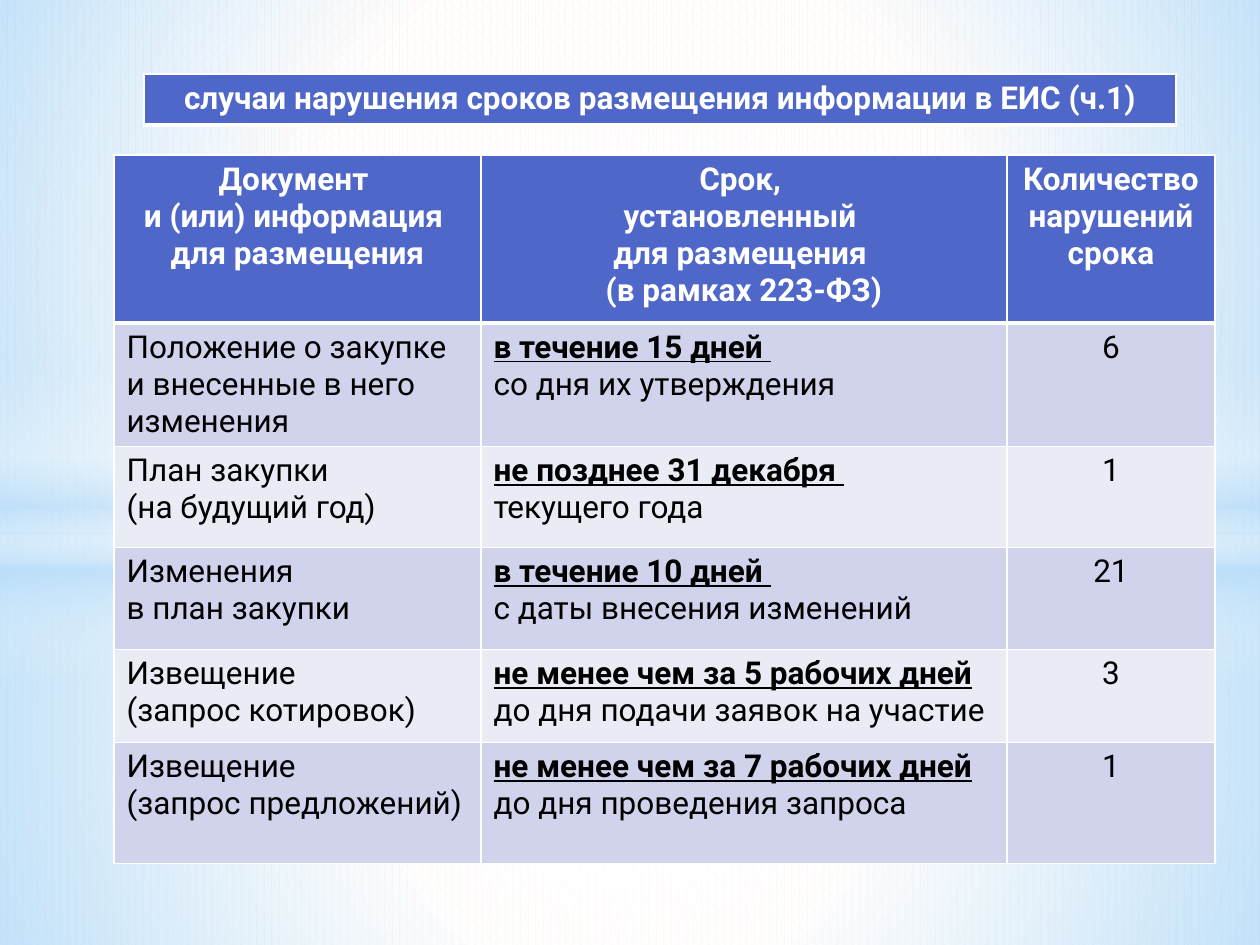
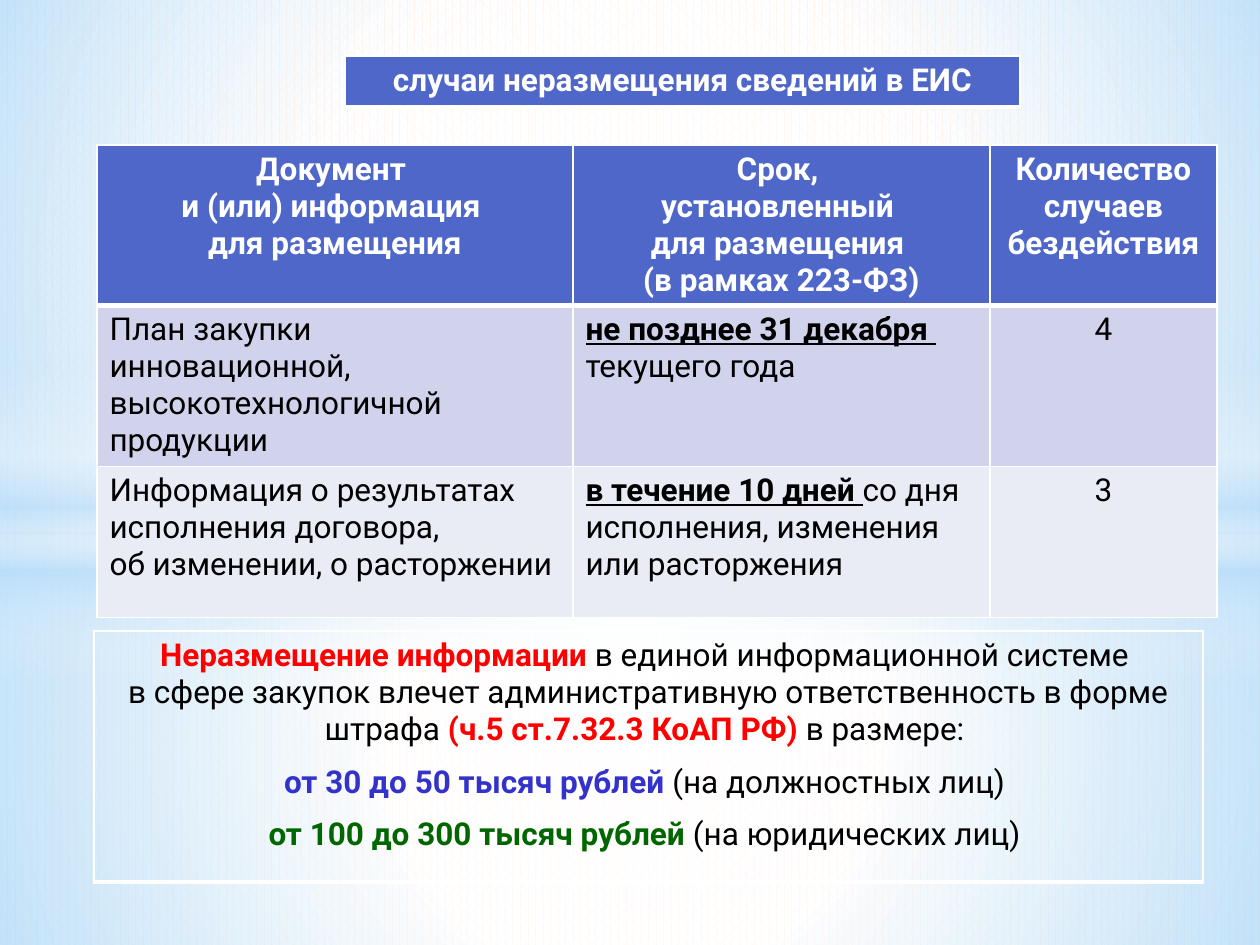
from dataclasses import dataclass

from pptx import Presentation
from pptx import util as u
from pptx.dml.color import RGBColor
from pptx.enum import dml, shapes, text
from pptx.oxml import ns, parse_xml

PX_PER_INCH = 126
FONT = "Roboto"
SIZE = u.Pt(18)
LINE_GAP = u.Pt(9)

WHITE = RGBColor(0xFF, 0xFF, 0xFF)
BLACK = RGBColor(0x00, 0x00, 0x00)
PEACH = RGBColor(0xFF, 0xE6, 0xD3)
SKY = RGBColor(0xB4, 0xDC, 0xFA)
HEADER_BLUE = RGBColor(0x4E, 0x67, 0xC8)
BAND_DARK = RGBColor(0xD0, 0xD3, 0xEB)
BAND_LIGHT = RGBColor(0xE9, 0xEB, 0xF5)
RED = RGBColor(0xFF, 0x00, 0x00)
FINE_BLUE = RGBColor(0x33, 0x33, 0xCC)
FINE_GREEN = RGBColor(0x00, 0x66, 0x00)


@dataclass(frozen=True)
class Words:
    text: str
    color: RGBColor = BLACK
    bold: bool = False
    underline: bool = False


Line = list[Words]


@dataclass(frozen=True)
class Box:
    left: int
    top: int
    width: int
    height: int


@dataclass(frozen=True)
class Glow:
    box: Box
    outline: shapes.MSO_SHAPE
    stops: list[tuple[int, RGBColor, int]]  # position %, colour, opacity %
    radial: bool = True


@dataclass(frozen=True)
class Entry:
    document: list[str]
    deadline: list[Line]
    count: int


@dataclass(frozen=True)
class Report:
    title: str
    title_box: Box
    left: int
    top: int
    columns: list[int]
    rows: list[int]
    count_heading: str
    entries: list[Entry]


RECT, OVAL = shapes.MSO_SHAPE.RECTANGLE, shapes.MSO_SHAPE.OVAL
GLOWS = [
    Glow(Box(0, 533, 1260, 412), RECT, [(0, WHITE, 91), (37, WHITE, 76), (100, SKY, 79)]),
    Glow(Box(0, 0, 1260, 533), RECT, [(0, WHITE, 89), (48, WHITE, 62), (100, SKY, 79)]),
    Glow(Box(0, 365, 1260, 315), RECT,
         [(0, WHITE, 0), (29, WHITE, 30), (45, SKY, 40),
          (55, WHITE, 26), (65, SKY, 60), (100, WHITE, 0)], radial=False),
    Glow(Box(0, 221, 1260, 703), OVAL, [(0, WHITE, 100), (54, WHITE, 0)]),
]


def term(words: str) -> Words:
    return Words(words, bold=True, underline=True)


DOCUMENT_HEADING = ["Документ ", "и (или) информация ", "для размещения"]
DEADLINE_HEADING = ["Срок, ", "установленный ", "для размещения ", "(в рамках 223-ФЗ)"]
YEAR_END = [[term("не позднее 31 декабря ")], [Words("текущего года")]]

REPORTS = [
    Report(
        "случаи нарушения сроков размещения информации в ЕИС (ч.1)",
        Box(144, 74, 1032, 51), 114, 155,
        [367, 526, 208], [168, 123, 101, 102, 93, 121],
        "Количество нарушений срока",
        [
            Entry(["Положение о закупке", "и внесенные в него изменения"],
                  [[term("в течение 15 дней ")], [Words("со дня их утверждения")]], 6),
            Entry(["План закупки", "(на будущий год)"], YEAR_END, 1),
            Entry(["Изменения", "в план закупки"],
                  [[term("в течение 10 дней ")], [Words("с даты внесения изменений")]], 21),
            Entry(["Извещение", "(запрос котировок)"],
                  [[term("не менее чем за 5 рабочих дней"),
                    Words(" до дня подачи заявок на участие")]], 3),
            Entry(["Извещение", "(запрос предложений)"],
                  [[term("не менее чем за 7 рабочих дней"),
                    Words(" до дня проведения запроса")]], 1),
        ],
    ),
    Report(
        "случаи неразмещения сведений в ЕИС",
        Box(345, 56, 675, 51), 97, 145,
        [476, 417, 227], [160, 161, 151],
        "Количество случаев бездействия",
        [
            Entry(["План закупки", "инновационной, высокотехнологичной продукции"],
                  YEAR_END, 4),
            Entry(["Информация о результатах исполнения договора,",
                   "об изменении, о расторжении"],
                  [[term("в течение 10 дней "),
                    Words("со дня исполнения, изменения или расторжения")]], 3),
        ],
    ),
]

PENALTY_BOX = Box(94, 631, 1109, 251)
PENALTY = [
    [Words("Неразмещение информации ", RED, True),
     Words("в единой информационной системе ")],
    [Words("в сфере закупок влечет административную ответственность в форме штрафа "),
     Words("(ч.5 ст.7.32.3 КоАП РФ) ", RED, True), Words("в размере: ")],
    [Words("от 30 до 50 тысяч рублей ", FINE_BLUE, True), Words("(на должностных лиц) ")],
    [Words("от 100 до 300 тысяч рублей ", FINE_GREEN, True), Words("(на юридических лиц) ")],
]


def px(length: int) -> u.Emu:
    return u.Emu(round(length * 914400 / PX_PER_INCH))


def place(box: Box) -> list[u.Emu]:
    return [px(n) for n in (box.left, box.top, box.width, box.height)]


def plain(lines: list[str]) -> list[Line]:
    return [[Words(line)] for line in lines]


def heading(lines: list[str]) -> list[Line]:
    return [[Words(line, WHITE, True)] for line in lines]


# Backdrop
def draw_glow(slide, glow: Glow) -> None:
    shape = slide.shapes.add_shape(glow.outline, *place(glow.box))
    shape.shadow.inherit = False
    shape.line.fill.background()
    shape.fill.background()
    stops = "".join(
        f'<a:gs pos="{pos * 1000}"><a:srgbClr val="{color}">'
        f'<a:alpha val="{opacity * 1000}"/></a:srgbClr></a:gs>'
        for pos, color, opacity in glow.stops)
    direction = ('<a:path path="circle"><a:fillToRect l="50000" t="50000" r="50000" '
                 'b="50000"/></a:path>' if glow.radial else '<a:lin ang="5400000" scaled="0"/>')
    gradient = parse_xml(f'<a:gradFill {ns.nsdecls("a")} rotWithShape="1">'
                         f'<a:gsLst>{stops}</a:gsLst>{direction}</a:gradFill>')
    properties = shape._element.spPr
    properties.replace(properties.find(ns.qn("a:noFill")), gradient)


def set_background(master) -> None:
    fill = master.background.fill
    fill.patterned()
    fill.pattern = dml.MSO_PATTERN.PERCENT_60
    fill.fore_color.rgb = PEACH
    fill.back_color.rgb = WHITE


# Tables
def add_grid(slide, left: int, top: int, columns: list[int], rows: list[int]):
    frame = slide.shapes.add_table(
        len(rows), len(columns), *place(Box(left, top, sum(columns), sum(rows))))
    grid = frame.table
    grid.first_row = grid.horz_banding = False
    for column, width in zip(grid.columns, columns):
        column.width = px(width)
    for row, height in zip(grid.rows, rows):
        row.height = px(height)
    return grid


def fill_cell(cell, lines: list[Line], fill: RGBColor | None = None, centered: bool = True,
              top_pt: int = 1, bottom_pt: int = 1) -> None:
    properties = cell._tc.get_or_add_tcPr()
    for side, points in (("L", 1), ("R", 1), ("T", top_pt), ("B", bottom_pt)):
        properties.append(parse_xml(
            f'<a:ln{side} {ns.nsdecls("a")} w="{u.Pt(points)}"><a:solidFill>'
            f'<a:srgbClr val="{WHITE}"/></a:solidFill></a:ln{side}>'))
    if fill is None:
        cell.fill.background()
    else:
        cell.fill.solid()
        cell.fill.fore_color.rgb = fill
    frame = cell.text_frame
    for index, line in enumerate(lines):
        paragraph = frame.add_paragraph() if index else frame.paragraphs[0]
        paragraph.alignment = text.PP_ALIGN.CENTER if centered else text.PP_ALIGN.LEFT
        for words in line:
            run = paragraph.add_run()
            run.text = words.text
            run.font.name, run.font.size = FONT, SIZE
            run.font.bold, run.font.underline = words.bold, words.underline
            run.font.color.rgb = words.color


def add_panel(slide, box: Box, lines: list[Line], fill: RGBColor | None = None):
    cell = add_grid(slide, box.left, box.top, [box.width], [box.height]).cell(0, 0)
    fill_cell(cell, lines, fill, bottom_pt=3)
    return cell


def draw_report(slide, report: Report) -> None:
    for glow in GLOWS:
        draw_glow(slide, glow)
    grid = add_grid(slide, report.left, report.top, report.columns, report.rows)
    headings = [DOCUMENT_HEADING, DEADLINE_HEADING, [report.count_heading]]
    for column, lines in enumerate(headings):
        fill_cell(grid.cell(0, column), heading(lines), HEADER_BLUE, bottom_pt=3)
    for row, entry in enumerate(report.entries, start=1):
        band = BAND_DARK if row % 2 else BAND_LIGHT
        contents = [plain(entry.document), entry.deadline, plain([str(entry.count)])]
        for column, lines in enumerate(contents):
            fill_cell(grid.cell(row, column), lines, band, centered=column == 2,
                      top_pt=3 if row == 1 else 1)
    add_panel(slide, report.title_box, heading([report.title]), HEADER_BLUE)


def main() -> None:
    prs = Presentation()
    prs.slide_width, prs.slide_height = px(1260), px(945)
    set_background(prs.slide_master)
    for report in REPORTS:
        slide = prs.slides.add_slide(prs.slide_layouts[6])
        draw_report(slide, report)

    # Penalty note on the last slide
    note = add_panel(slide, PENALTY_BOX, PENALTY)
    for fine in note.text_frame.paragraphs[2:]:
        fine.space_before = LINE_GAP
    prs.save("out.pptx")


if __name__ == "__main__":
    main()
